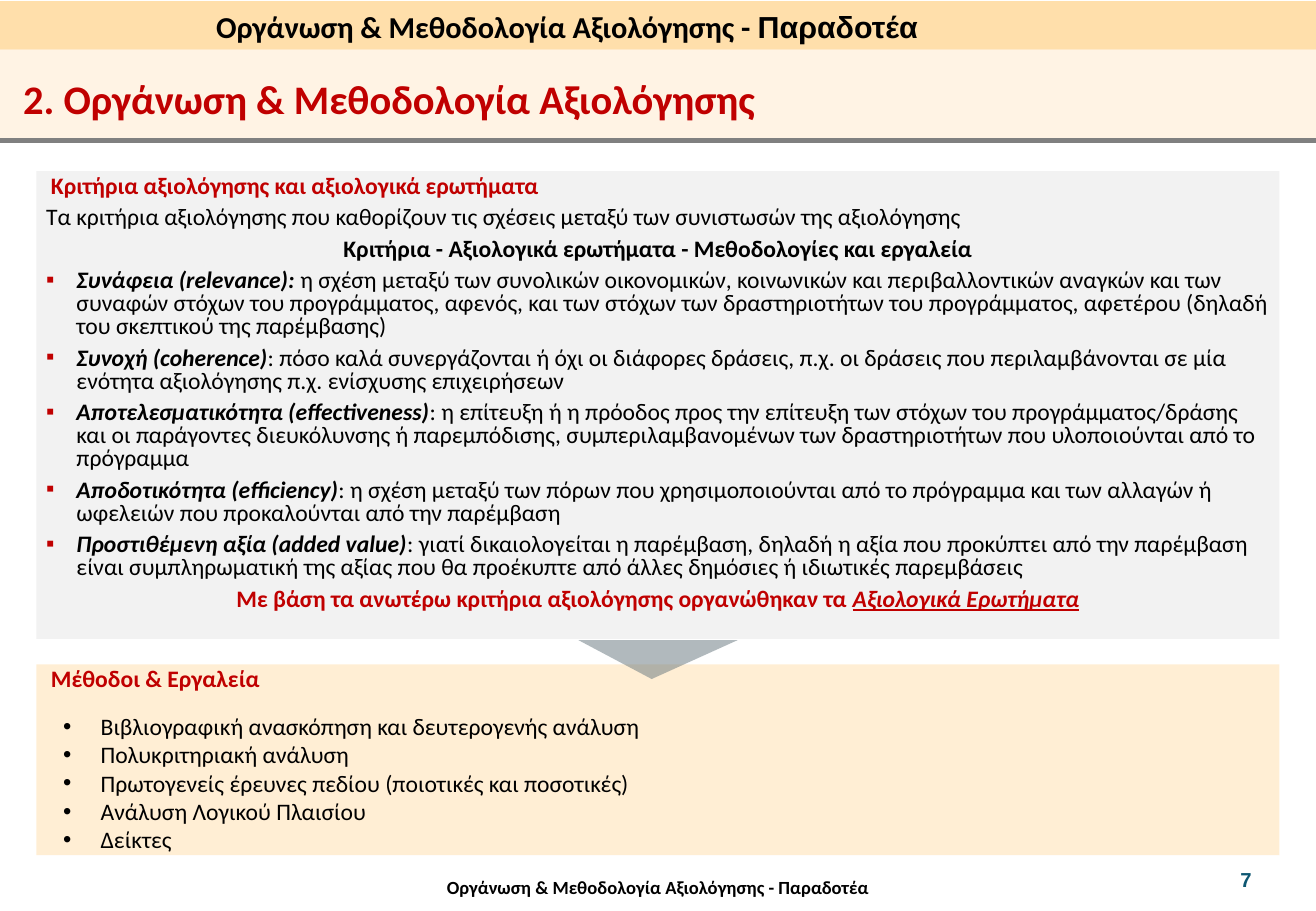
"""Build the evaluation criteria and methods slide."""
from dataclasses import dataclass

from lxml import etree
from pptx import Presentation
from pptx.dml.color import RGBColor
from pptx.enum.shapes import MSO_CONNECTOR as CONN, MSO_SHAPE as SHAPE
from pptx.enum.text import MSO_ANCHOR as ANCHOR, MSO_AUTO_SIZE as AUTO, PP_ALIGN as ALIGN
from pptx.oxml.ns import qn
from pptx.util import Inches, Pt


@dataclass(frozen=True)
class Theme:
    font: str = "Calibri"
    alt_font: str = "Arial"
    black: str = "000000"
    red: str = "C00000"
    teal: str = "0E5772"
    band: str = "FFDFAB"
    title_band: str = "FFE9CA"
    panel: str = "F2F2F2"
    rule: str = "808080"
    arrow: str = "65757D"
    title: int = 24
    banner: int = 18
    body: int = 14
    page: int = 12
    footer: int = 11
    leading: float = 13.7
    gap: float = 4.9


T = Theme()
W, H = 10.83, 7.5
MARGIN = 0.3
PANEL_W = W - 2 * MARGIN
BANNER_H, TITLE_BOTTOM = 0.41, 1.16

TOPIC = "Οργάνωση & Μεθοδολογία Αξιολόγησης"
DELIVERABLE = "Παραδοτέα"
PAGE = "7"
CRITERIA_HEAD = "Κριτήρια αξιολόγησης και αξιολογικά ερωτήματα"
INTRO = "Τα κριτήρια αξιολόγησης που καθορίζουν τις σχέσεις μεταξύ των συνιστωσών της αξιολόγησης"
SUBHEAD = "Κριτήρια - Αξιολογικά ερωτήματα - Μεθοδολογίες και εργαλεία"
CRITERIA = [
    ("Συνάφεια (relevance): ",
     "η σχέση μεταξύ των συνολικών οικονομικών, κοινωνικών και περιβαλλοντικών αναγκών και των "
     "συναφών στόχων του προγράμματος, αφενός, και των στόχων των δραστηριοτήτων του "
     "προγράμματος, αφετέρου (δηλαδή του σκεπτικού της παρέμβασης)"),
    ("Συνοχή (coherence)",
     ": πόσο καλά συνεργάζονται ή όχι οι διάφορες δράσεις, π.χ. οι δράσεις που περιλαμβάνονται "
     "σε μία ενότητα αξιολόγησης π.χ. ενίσχυσης επιχειρήσεων"),
    ("Αποτελεσματικότητα (effectiveness)",
     ": η επίτευξη ή η πρόοδος προς την επίτευξη των στόχων του προγράμματος/δράσης και οι "
     "παράγοντες διευκόλυνσης ή παρεμπόδισης, συμπεριλαμβανομένων των δραστηριοτήτων που "
     "υλοποιούνται από το πρόγραμμα"),
    ("Αποδοτικότητα (efficiency)",
     ": η σχέση μεταξύ των πόρων που χρησιμοποιούνται από το πρόγραμμα και των αλλαγών ή "
     "ωφελειών που προκαλούνται από την παρέμβαση"),
    ("Προστιθέμενη αξία (added value)",
     ": γιατί δικαιολογείται η παρέμβαση, δηλαδή η αξία που προκύπτει από την παρέμβαση είναι "
     "συμπληρωματική της αξίας που θα προέκυπτε από άλλες δημόσιες ή ιδιωτικές παρεμβάσεις"),
]
CLOSING = ("Με βάση τα ανωτέρω κριτήρια αξιολόγησης οργανώθηκαν τα ", "Αξιολογικά Ερωτήματα")
METHODS_HEAD = "Μέθοδοι & Εργαλεία"
METHODS = [
    "Βιβλιογραφική ανασκόπηση και δευτερογενής ανάλυση",
    "Πολυκριτηριακή ανάλυση",
    "Πρωτογενείς έρευνες πεδίου (ποιοτικές και ποσοτικές)",
    "Ανάλυση Λογικού Πλαισίου",
    "Δείκτες",
]


def add_run(p, text, size=T.body, color=T.black, font=T.font, **style):
    r = p.add_run()
    r.text = text
    f = r.font
    f.name, f.size = font, Pt(size)
    f.color.rgb = RGBColor.from_string(color)
    f.bold = style.get("bold", False)
    f.italic = style.get("italic", False)
    f.underline = style.get("underline", False)


def add_para(tf, runs, align=ALIGN.LEFT, left=0, hang=0, bullet=None, bullet_color=None,
             leading=None, gap=0):
    first = not tf.paragraphs[0].runs
    p = tf.paragraphs[0] if first else tf.add_paragraph()
    p.alignment = align
    p.space_before = Pt(0 if first else gap)
    if leading:
        p.line_spacing = Pt(leading)
    pPr = p._p.get_or_add_pPr()
    pPr.set("marL", str(Inches(left)))
    pPr.set("indent", str(Inches(-hang)))
    if bullet_color:
        clr = etree.SubElement(pPr, qn("a:buClr"))
        etree.SubElement(clr, qn("a:srgbClr"), val=bullet_color)
    if bullet:
        etree.SubElement(pPr, qn("a:buFont"), typeface=T.alt_font)
        etree.SubElement(pPr, qn("a:buChar"), char=bullet)
    for text, style in runs:
        add_run(p, text, **style)


def frame(sp, inset_x=0.1, inset_y=0.05):
    tf = sp.text_frame
    tf.word_wrap, tf.auto_size, tf.vertical_anchor = True, AUTO.NONE, ANCHOR.TOP
    tf.margin_left = tf.margin_right = Inches(inset_x)
    tf.margin_top = tf.margin_bottom = Inches(inset_y)
    return tf


def add_box(s, x, y, w, h, **insets):
    return frame(s.shapes.add_textbox(Inches(x), Inches(y), Inches(w), Inches(h)), **insets)


def add_filled(s, x, y, w, h, color, alpha=None, kind=SHAPE.RECTANGLE):
    sp = s.shapes.add_shape(kind, Inches(x), Inches(y), Inches(w), Inches(h))
    sp.shadow.inherit = False
    sp.line.fill.background()
    sp.fill.solid()
    sp.fill.fore_color.rgb = RGBColor.from_string(color)
    if alpha:
        clr = sp.element.spPr.find(".//" + qn("a:srgbClr"))
        etree.SubElement(clr, qn("a:alpha"), val=str(alpha * 1000))
    return sp


def add_header(s):
    add_filled(s, 0, 0.01, W, BANNER_H - 0.01, T.band)
    add_filled(s, 0, BANNER_H, W, TITLE_BOTTOM - BANNER_H, T.title_band, alpha=50)
    rule = s.shapes.add_connector(CONN.STRAIGHT, 0, Inches(TITLE_BOTTOM),
                                  Inches(W), Inches(TITLE_BOTTOM))
    rule.line.color.rgb = RGBColor.from_string(T.rule)
    rule.line.width = Pt(3)
    etree.SubElement(rule.element.spPr, qn("a:effectLst"))
    style = dict(size=T.banner, bold=True)
    add_para(add_box(s, 1.68, 0.02, 8.55, 0.4),
             [(TOPIC + " - ", style), (DELIVERABLE, dict(style, font=T.alt_font))])
    title = s.shapes.title
    title.left, title.top, title.width, title.height = 0, Inches(0.56), Inches(W), Inches(0.5)
    add_para(frame(title), [("2. " + TOPIC, dict(size=T.title, color=T.red, bold=True))],
             left=0.09)
    title.element.getparent().append(title.element)


def add_footer(s):
    add_para(add_box(s, 2.82, 7.21, W - 2 * 2.82, 0.18, inset_x=0, inset_y=0),
             [(f"{TOPIC} - {DELIVERABLE}", dict(size=T.footer, bold=True))], align=ALIGN.CENTER)
    add_para(add_box(s, 10.11, 7.09, 0.52, 0.3),
             [(PAGE, dict(size=T.page, color=T.teal, font=T.alt_font, bold=True))])


def add_panels(s):
    tight = dict(leading=T.leading, gap=T.gap)
    red = dict(color=T.red, bold=True)
    methods = frame(add_filled(s, MARGIN, 5.47, PANEL_W, 1.57, T.band, alpha=50), 0.08, 0.04)
    criteria = frame(add_filled(s, MARGIN, 1.41, PANEL_W, 3.85, T.panel), 0.08, 0.04)
    for tf, head in ((methods, METHODS_HEAD), (criteria, CRITERIA_HEAD)):
        add_para(tf, [(head, red)], left=0.04, **tight)
    add_para(criteria, [(INTRO, {})], **tight)
    add_para(criteria, [(SUBHEAD, dict(bold=True))], align=ALIGN.CENTER, **tight)
    for name, meaning in CRITERIA:
        add_para(criteria, [(name, dict(bold=True, italic=True)), (meaning, {})],
                 left=0.25, hang=0.25, bullet="▪", bullet_color=T.red, **tight)
    lead, link = CLOSING
    add_para(criteria, [(lead, red), (link, dict(red, italic=True, underline=True))],
             align=ALIGN.CENTER, **tight)
    arrow = add_filled(s, 4.76, 5.27, 1.31, 0.32, T.arrow, alpha=50,
                       kind=SHAPE.ISOSCELES_TRIANGLE)
    arrow.adjustments[0] = 0.54
    arrow.rotation = 180
    tf = add_box(s, 0.42, 5.81, 9.69, 1.28)
    for method in METHODS:
        add_para(tf, [(method, {})], left=0.31, hang=0.31, bullet="•")


def main():
    prs = Presentation()
    prs.slide_width, prs.slide_height = Inches(W), Inches(H)
    s = prs.slides.add_slide(prs.slide_layouts[5])
    add_footer(s)
    add_header(s)
    add_panels(s)
    prs.save("out.pptx")


if __name__ == "__main__":
    main()
